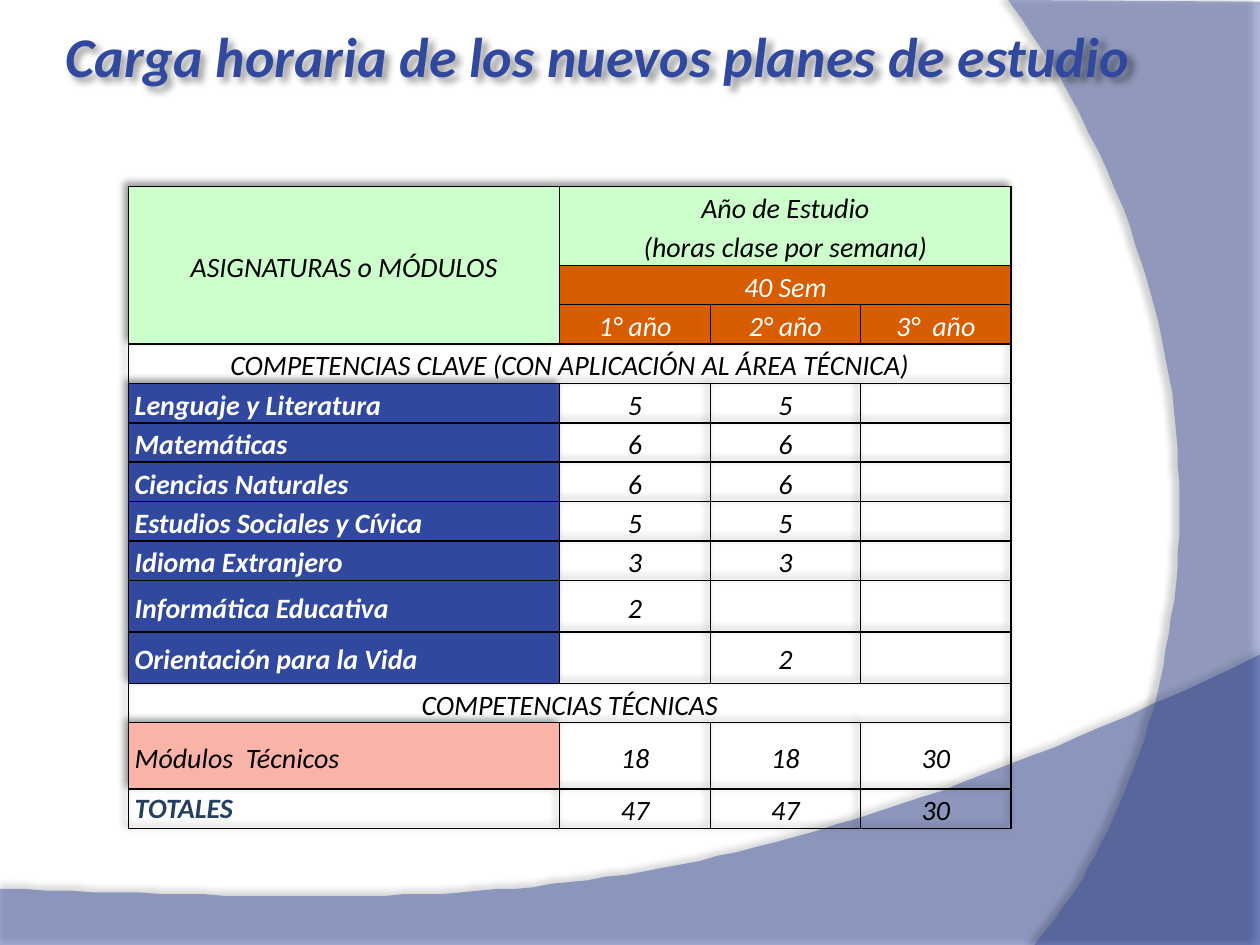
"""Build the slide with the weekly class hours of the new study plans."""
import lxml.etree
import pptx
import pptx.dml.color
import pptx.enum.text
import pptx.oxml
import pptx.oxml.ns
import pptx.util

Pt = pptx.util.Pt
RGB = pptx.dml.color.RGBColor.from_string
ALIGN = pptx.enum.text.PP_ALIGN
MIDDLE = pptx.enum.text.MSO_ANCHOR.MIDDLE
NS = pptx.oxml.ns.nsdecls("a")
COLORS = {
    "blue": "31489F", "green": "CCFFCC", "orange": "D85C00", "pink": "F9B3A7",
    "navy": "243F60", "black": "000000", "white": "FFFFFF",
}


def write(frame, text, size=16, color="black", bold=False, align=ALIGN.CENTER, spacing=1.15):
    for index, line in enumerate(text.split("\n")):
        paragraph = frame.add_paragraph() if index else frame.paragraphs[0]
        paragraph.alignment = align
        paragraph.line_spacing = spacing
        run = paragraph.add_run()
        run.text = line
        run.font.name = "Calibri"
        run.font.size = Pt(size)
        run.font.bold = bold
        run.font.italic = True
        run.font.color.rgb = RGB(COLORS[color])


def shadow_effect(opacity, distance, angle):
    return pptx.oxml.parse_xml(
        f'<a:effectLst {NS}><a:outerShdw blurRad="{Pt(4)}" dist="{Pt(distance)}" '
        f'dir="{angle * 60000}" algn="ctr" rotWithShape="0"><a:srgbClr val="{COLORS["black"]}">'
        f'<a:alpha val="{opacity * 1000}"/></a:srgbClr></a:outerShdw></a:effectLst>')


deck = pptx.Presentation()
deck.slide_width, deck.slide_height = Pt(720), Pt(540)
slide = deck.slides.add_slide(deck.slide_layouts[6])

bottom_wave = [(720, 374.4), (402.5, 524.9), (281.5, 517.7), (0, 507.6)]
right_arc = [(591.1, 540), (673.2, 445.7), (733, 216), (576, 0)]
swooshes = [
    (bottom_wave, [(0, 540.7), (720, 540.7)], 45, (35, 3.5, 270)),
    (right_arc, [(720, 1.4), (720, 540)], 40, (45, 4, 180)),
]
STEPS = 60
for curve, corners, opacity, shadow in swooshes:
    outline = []
    for step in range(STEPS + 1):
        t = step / STEPS
        weights = [(1 - t) ** 3, 3 * t * (1 - t) ** 2, 3 * t ** 2 * (1 - t), t ** 3]
        outline.append(tuple(sum(w * point[axis] for w, point in zip(weights, curve))
                             for axis in (0, 1)))
    builder = slide.shapes.build_freeform(*outline[0], scale=Pt(1))
    builder.add_line_segments(outline[1:] + corners, close=True)
    swoosh = builder.convert_to_shape()
    swoosh.fill.solid()
    swoosh.fill.fore_color.rgb = RGB(COLORS["blue"])
    swoosh.line.fill.background()
    tint = swoosh.element.spPr.find(".//" + pptx.oxml.ns.qn("a:srgbClr"))
    lxml.etree.SubElement(tint, pptx.oxml.ns.qn("a:alpha"), val=str(opacity * 1000))
    swoosh.element.spPr.append(shadow_effect(*shadow))

subjects = [
    ("Lenguaje y Literatura", "5", "5", ""),
    ("Matemáticas", "6", "6", ""),
    ("Ciencias Naturales", "6", "6", ""),
    ("Estudios Sociales y Cívica", "5", "5", ""),
    ("Idioma Extranjero", "3", "3", ""),
    ("Informática Educativa", "2", "", ""),
    ("Orientación para la Vida", "", "2", ""),
]
plan = [
    ("ASIGNATURAS o MÓDULOS", "Año de Estudio\n(horas clase por semana)", "", ""),
    ("", "40 Sem", "", ""),
    ("", "1° año", "2° año", "3°  año"),
    ("COMPETENCIAS CLAVE (CON APLICACIÓN AL ÁREA TÉCNICA)", "", "", ""),
    *subjects,
    ("COMPETENCIAS TÉCNICAS", "", "", ""),
    ("Módulos  Técnicos", "18", "18", "30"),
    ("TOTALES", "47", "47", "30"),
]
subject_rows = range(4, 4 + len(subjects))
modules_row, totals_row = 12, 13
LINE = 22.5
row_heights = [2 * LINE] + [LINE] * 8 + [29.4, 29.4, LINE, 38, LINE]
column_widths = [246.4, 86.2, 85.7, 86.2]

hours_frame = slide.shapes.add_table(len(plan), 4, Pt(73.4), Pt(106.6),
                                     Pt(sum(column_widths)), Pt(sum(row_heights)))
hours = hours_frame.table
hours.first_row = hours.horz_banding = False
hours_frame.element.find(".//" + pptx.oxml.ns.qn("a:tblPr")).insert(0, shadow_effect(40, 3, 225))
for column, width in zip(hours.columns, column_widths):
    column.width = Pt(width)
for row, height in zip(hours.rows, row_heights):
    row.height = Pt(height)
for top, left, bottom, right in [(0, 0, 2, 0), (0, 1, 0, 3), (1, 1, 1, 3), (3, 0, 3, 3), (11, 0, 11, 3)]:
    hours.cell(top, left).merge(hours.cell(bottom, right))

for r, entries in enumerate(plan):
    for c, entry in enumerate(entries):
        cell = hours.cell(r, c)
        cell.vertical_anchor = MIDDLE
        cell.margin_left = cell.margin_right = Pt(3.6)
        cell.margin_top = cell.margin_bottom = 0
        for side in "LRTB":
            cell._tc.get_or_add_tcPr().append(pptx.oxml.parse_xml(
                f'<a:ln{side} {NS} w="{Pt(1)}"><a:solidFill><a:srgbClr val="{COLORS["black"]}"/>'
                f'</a:solidFill></a:ln{side}>'))
        background, style = None, {}
        if r == 0 or (r < 3 and c == 0):
            background = "green"
        elif r < 3:
            background, style = "orange", {"color": "white"}
        elif c == 0 and r in subject_rows:
            background, style = "blue", {"color": "white", "bold": True, "align": ALIGN.LEFT}
        elif c == 0 and r == modules_row:
            background, style = "pink", {"align": ALIGN.LEFT}
        elif c == 0 and r == totals_row:
            style = {"color": "navy", "bold": True, "align": ALIGN.JUSTIFY, "spacing": 1.0}
        if background:
            cell.fill.solid()
            cell.fill.fore_color.rgb = RGB(COLORS[background])
        else:
            cell.fill.background()
        if entry:
            write(cell.text_frame, entry, **style)

title = slide.shapes.add_textbox(Pt(14.4), Pt(8.6), Pt(654.5), Pt(46))
title.text_frame.word_wrap = True
write(title.text_frame, "Carga horaria de los nuevos planes de estudio",
      size=32, color="blue", bold=True, spacing=1.0)
title.element.spPr.append(shadow_effect(40, 3, 45))

deck.save("out.pptx")
